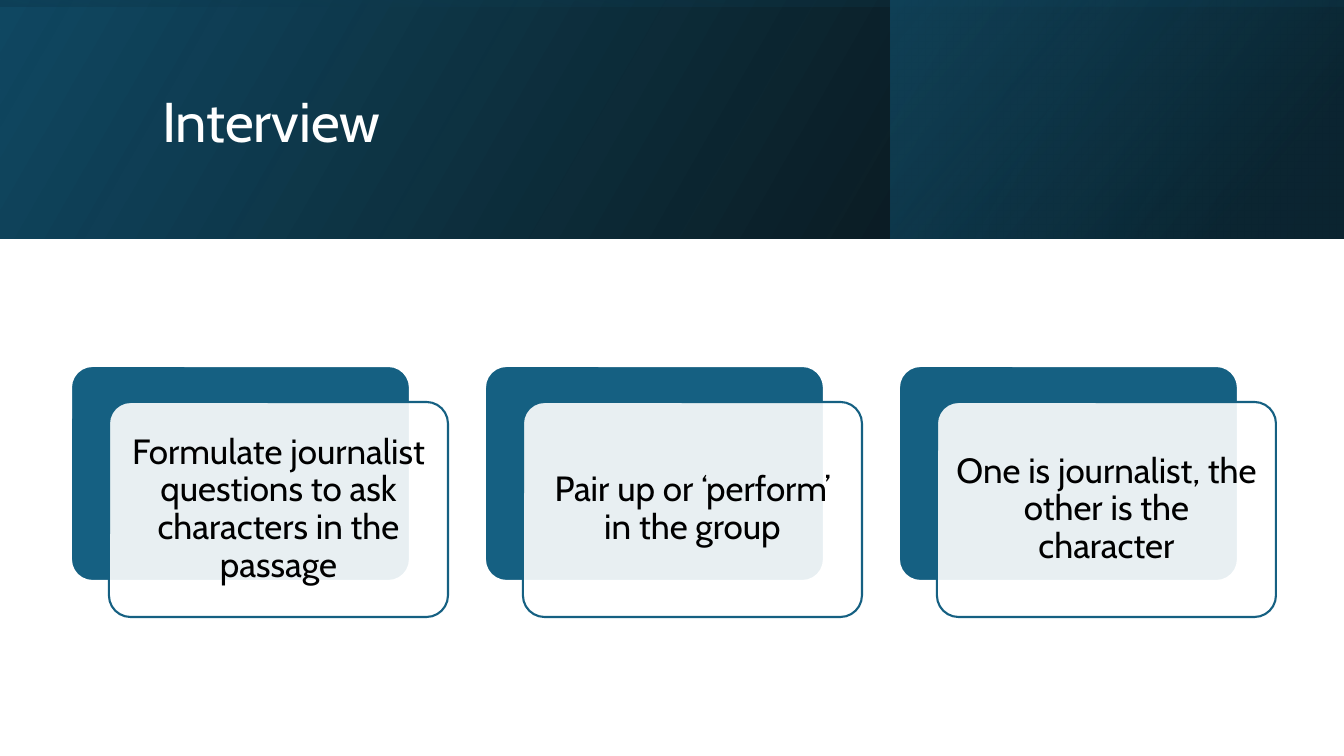
from typing import NamedTuple

from lxml.etree import SubElement
from pptx import Presentation
from pptx.dml.color import RGBColor
from pptx.enum.shapes import MSO_SHAPE
from pptx.enum.text import MSO_ANCHOR, MSO_AUTO_SIZE, PP_ALIGN
from pptx.oxml.ns import qn
from pptx.shapes.autoshape import Shape
from pptx.slide import Slide
from pptx.text.text import TextFrame
from pptx.util import Emu, Pt

FONT = "Cabin"
BLUE, WHITE, BLACK = "156082", "FFFFFF", "000000"
BAND_HEIGHT = 239
CARD_WIDTH, CARD_HEIGHT, CARD_STEP = 339, 215, 414
CARD_LEFT, CARD_TOP = 71, 366
FRONT_SHIFT_X, FRONT_SHIFT_Y = 38, 36
STEPS = [
    "Formulate journalist questions to ask characters in the passage",
    "Pair up or ‘perform’ in the group",
    "One is journalist, the other is the character",
]


class Stop(NamedTuple):
    position: float
    color: str
    opacity: int


class Band(NamedTuple):
    left: int
    width: int
    angle: int  # counter-clockwise degrees
    stops: tuple[Stop, Stop]


BANDS = [
    Band(0, 1344, 150, (Stop(0, BLACK, 96), Stop(1, "104862", 100))),
    Band(891, 452, 140, (Stop(0.19, "0B3041", 68), Stop(1, BLUE, 48))),
    Band(0, 1344, 260, (Stop(0.23, "104862", 16), Stop(0.99, BLACK, 45))),
]


def px(length: int) -> Emu:
    return Emu(round(length * 914400 / 100.8))


def rgb(color: str) -> RGBColor:
    return RGBColor.from_string(color)


def set_opacity(color_element, percent: int) -> None:
    SubElement(color_element, qn("a:alpha")).set("val", str(percent * 1000))


def add_box(page: Slide, kind: MSO_SHAPE, left: int, top: int, width: int, height: int) -> Shape:
    box = page.shapes.add_shape(kind, px(left), px(top), px(width), px(height))
    box.shadow.inherit = False
    return box


def add_band(page: Slide, band: Band) -> None:
    box = add_box(page, MSO_SHAPE.RECTANGLE, band.left, 0, band.width, BAND_HEIGHT)
    box.line.fill.background()
    box.fill.gradient()
    box.fill.gradient_angle = band.angle
    for gradient_stop, stop in zip(box.fill.gradient_stops, band.stops):
        gradient_stop.position = stop.position
        gradient_stop.color.rgb = rgb(stop.color)
    colors = box.element.spPr.iter(qn("a:srgbClr"))
    for color_element, stop in zip(list(colors), band.stops):
        set_opacity(color_element, stop.opacity)


def add_card(page: Slide, left: int, top: int, fill: str, line: str) -> Shape:
    card = add_box(page, MSO_SHAPE.ROUNDED_RECTANGLE, left, top, CARD_WIDTH, CARD_HEIGHT)
    card.adjustments[0] = 0.1
    card.fill.solid()
    card.fill.fore_color.rgb = rgb(fill)
    card.line.color.rgb = rgb(line)
    card.line.width = Pt(1.5)
    return card


def write(frame: TextFrame, text: str, size: int, color: str, align: PP_ALIGN) -> None:
    frame.text = text
    frame.word_wrap = True
    frame.auto_size = MSO_AUTO_SIZE.NONE
    frame.vertical_anchor = MSO_ANCHOR.MIDDLE
    para = frame.paragraphs[0]
    para.alignment = align
    para.line_spacing = 0.9
    para.font.name = FONT
    para.font.size = Pt(size)
    para.font.color.rgb = rgb(color)


def add_step(page: Slide, left: int, text: str) -> None:
    add_card(page, left, CARD_TOP, BLUE, WHITE)
    front = add_card(page, left + FRONT_SHIFT_X, CARD_TOP + FRONT_SHIFT_Y, WHITE, BLUE)
    set_opacity(front.element.spPr.find(qn("a:solidFill"))[0], 90)
    frame = front.text_frame
    frame.margin_left = frame.margin_right = px(10)
    frame.margin_top = frame.margin_bottom = px(10)
    write(frame, text, 25, BLACK, PP_ALIGN.CENTER)


def main() -> None:
    deck = Presentation()
    deck.slide_width, deck.slide_height = px(1344), px(756)
    page = deck.slides.add_slide(deck.slide_layouts[5])

    # Header bands
    for band in BANDS:
        add_band(page, band)

    # Title, brought in front of the bands
    title = page.shapes.title
    title.left, title.top, title.width, title.height = px(152), px(38), px(1072), px(173)
    write(title.text_frame, "Interview", 40, WHITE, PP_ALIGN.LEFT)
    page.shapes.element.append(title.element)

    # Step cards
    for index, text in enumerate(STEPS):
        add_step(page, CARD_LEFT + index * CARD_STEP, text)

    deck.save("out.pptx")


if __name__ == "__main__":
    main()
